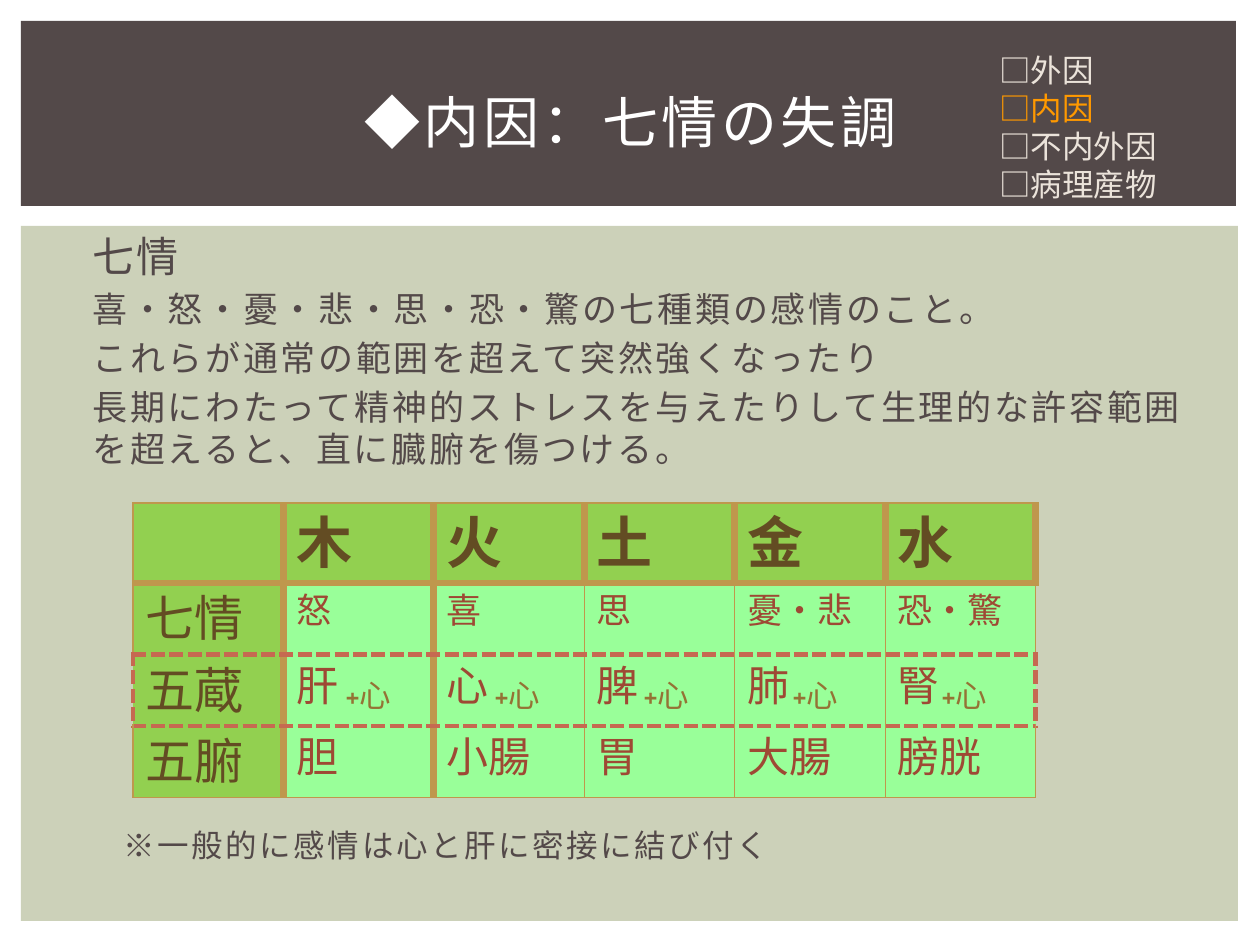
"""Build the slide on the seven emotions as internal causes of disease."""
import lxml.etree
import pptx
import pptx.dml.color
import pptx.enum.shapes
import pptx.enum.text
import pptx.oxml.ns
import pptx.util

RGBColor = pptx.dml.color.RGBColor
BROWN = RGBColor(0x53, 0x49, 0x49)
SAGE = RGBColor(0xCC, 0xD1, 0xB9)
WHITE = RGBColor(0xFF, 0xFF, 0xFF)
CREAM = RGBColor(0xEB, 0xE3, 0xDA)
ORANGE = RGBColor(0xFF, 0x99, 0x00)
GREEN = RGBColor(0x92, 0xD0, 0x50)
MINT = RGBColor(0x99, 0xFF, 0x99)
DARK_GOLD = RGBColor(0x63, 0x4C, 0x23)
RUST = RGBColor(0x9E, 0x49, 0x34)
GOLD = RGBColor(0x94, 0x73, 0x35)
BORDER = RGBColor(0xBF, 0x97, 0x4D)
DASHED_BORDER = RGBColor(0xC6, 0x69, 0x51)

FONT = "Cabin"
EMU_PER_PX = 914400 / 126

PANELS = [((21, 226, 1217, 695), SAGE), ((21, 21, 1215, 185), BROWN)]
TITLE = "◆内因：七情の失調"
CAUSES = [("□外因", CREAM), ("□内因", ORANGE), ("□不内外因", CREAM), ("□病理産物", CREAM)]
EXPLANATION = [
    ("七情", 24),
    ("喜・怒・憂・悲・思・恐・驚の七種類の感情のこと。", 20),
    ("これらが通常の範囲を超えて突然強くなったり", 20),
    ("長期にわたって精神的ストレスを与えたりして生理的な許容範囲を超えると、直に臓腑を傷つける。", 20),
]
FOOTNOTE = "※一般的に感情は心と肝に密接に結び付く"
HEART = "+心"
ELEMENTS = [
    ["", "木", "火", "土", "金", "水"],
    ["七情", "怒", "喜", "思", "憂・悲", "恐・驚"],
    ["五蔵", "肝", "心", "脾", "肺", "腎"],
    ["五腑", "胆", "小腸", "胃", "大腸", "膀胱"],
]
ROW_HEIGHTS = [80, 71, 71, 71]
ROW_SIZES = [32, 20, 24, 24]
LABEL_SIZE = 28
ORGAN_ROW = 2

THIN = (BORDER, 0.79, "solid")
THICK = (BORDER, 4.5, "solid")
DASHED = (DASHED_BORDER, 3, "sysDash")


def px(length):
    return pptx.util.Emu(round(length * EMU_PER_PX))


def set_font(paragraph, size, color, bold=False, spacing=0):
    font = paragraph.font
    font.name = FONT
    font.size = pptx.util.Pt(size)
    font.bold = bold
    font.color.rgb = color
    properties = paragraph._p.pPr.find(pptx.oxml.ns.qn("a:defRPr"))
    properties.set("spc", str(round(spacing * 100)))
    lxml.etree.SubElement(properties, pptx.oxml.ns.qn("a:ea"), typeface=FONT)


def add_text(slide, box, lines, spacing=0, indent=0, gap=0, centered=False):
    frame = slide.shapes.add_textbox(*map(px, box)).text_frame
    frame.word_wrap = True
    if centered:
        frame.vertical_anchor = pptx.enum.text.MSO_ANCHOR.MIDDLE
    for index, (text, size, color) in enumerate(lines):
        paragraph = frame.add_paragraph() if index else frame.paragraphs[0]
        paragraph.text = text
        if centered:
            paragraph.alignment = pptx.enum.text.PP_ALIGN.CENTER
        if gap:
            paragraph.space_before = pptx.util.Pt(gap)
        set_font(paragraph, size, color, spacing=spacing)
        if indent:
            paragraph._p.pPr.set("marL", str(px(indent)))
            paragraph._p.pPr.set("indent", "0")


def vertical_border(row, edge):
    if row == ORGAN_ROW and edge in (0, len(ELEMENTS[0])):
        return DASHED
    return THICK if edge in (1, 2) or (row == 0 and edge) else THIN


def horizontal_border(edge):
    if edge in (ORGAN_ROW, ORGAN_ROW + 1):
        return DASHED
    return THICK if edge == 1 else THIN


def set_border(cell, side, border):
    color, width, dash = border
    qn = pptx.oxml.ns.qn
    line = lxml.etree.SubElement(
        cell._tc.get_or_add_tcPr(), qn("a:ln" + side), w=str(pptx.util.Pt(width)))
    fill = lxml.etree.SubElement(line, qn("a:solidFill"))
    lxml.etree.SubElement(fill, qn("a:srgbClr"), val=str(color))
    lxml.etree.SubElement(line, qn("a:prstDash"), val=dash)


def add_elements_table(slide):
    box = (133, 503, 903, sum(ROW_HEIGHTS))
    table = slide.shapes.add_table(
        len(ELEMENTS), len(ELEMENTS[0]), *map(px, box)).table
    table.first_row = table.horz_banding = False
    for row, texts in enumerate(ELEMENTS):
        table.rows[row].height = px(ROW_HEIGHTS[row])
        for column, text in enumerate(texts):
            cell = table.cell(row, column)
            set_border(cell, "L", vertical_border(row, column))
            set_border(cell, "R", vertical_border(row, column + 1))
            set_border(cell, "T", horizontal_border(row))
            set_border(cell, "B", horizontal_border(row + 1))
            heading = row == 0 or column == 0
            cell.fill.solid()
            cell.fill.fore_color.rgb = GREEN if heading else MINT
            cell.text = text
            size = LABEL_SIZE if row and column == 0 else ROW_SIZES[row]
            set_font(cell.text_frame.paragraphs[0], size,
                     DARK_GOLD if heading else RUST, bold=row == 0)


def main():
    presentation = pptx.Presentation()
    presentation.slide_width, presentation.slide_height = px(1260), px(945)
    slide = presentation.slides.add_slide(presentation.slide_layouts[6])
    for box, color in PANELS:
        panel = slide.shapes.add_shape(
            pptx.enum.shapes.MSO_SHAPE.RECTANGLE, *map(px, box))
        panel.shadow.inherit = False
        panel.fill.solid()
        panel.fill.fore_color.rgb = color
        panel.line.fill.background()
    add_text(slide, (74, 224, 1142, 297),
             [(text, size, BROWN) for text, size in EXPLANATION],
             spacing=1.5, indent=6, gap=4)
    add_text(slide, (53, 49, 1155, 145), [(TITLE, 32, WHITE)], spacing=2, centered=True)
    add_text(slide, (987, 45, 248, 165), [(text, 18, color) for text, color in CAUSES])
    add_elements_table(slide)
    add_text(slide, (105, 820, 814, 89), [(FOOTNOTE, 18, BROWN)],
             spacing=1.5, indent=6, gap=4)
    for organ in range(len(ELEMENTS[ORGAN_ROW]) - 1):
        add_text(slide, (333 + 149 * organ, 670, 100, 50), [(HEART, 18, GOLD)])
    presentation.save("out.pptx")


if __name__ == "__main__":
    main()
